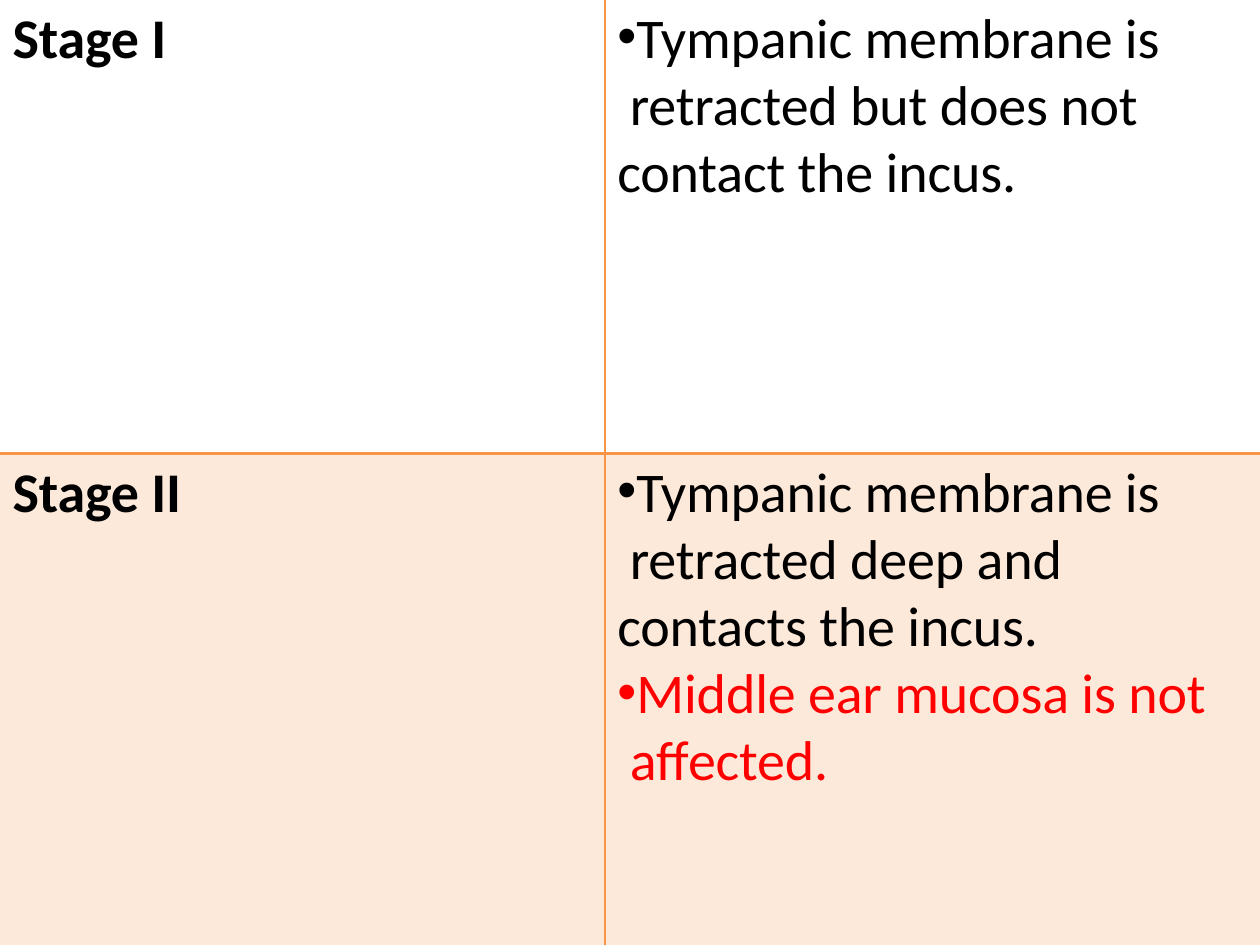
from lxml.etree import SubElement as Sub
from pptx import Presentation
from pptx.dml.color import RGBColor as RGB
from pptx.enum.shapes import MSO_CONNECTOR as Link, MSO_SHAPE as Kind
from pptx.oxml.ns import qn
from pptx.util import Inches, Pt

COLORS = {"text": "000000", "alert": "FF0000", "accent": "F79546"}
STAGES = [
    ("Stage I", [
        ("Tympanic membrane is\v retracted but does not\vcontact the incus.", "text"),
    ]),
    ("Stage II", [
        ("Tympanic membrane is\v retracted deep and\vcontacts the incus.", "text"),
        ("Middle ear mucosa is not\v affected.", "alert"),
    ]),
]
WIDTH, HEIGHT = 10, 7.5
SPLIT_X, SPLIT_Y = 4.8, 3.6
PAD_X, PAD_Y = 0.09, 0.01
LINE_H = 0.54
INSETS = {"margin_left": 0, "margin_right": 0,
          "margin_top": Inches(0.01), "margin_bottom": 0}
FONT = {"name": "Calibri", "size": Pt(32)}


def color(name):
    return RGB.from_string(COLORS[name])


def add_tint(slide, left, width):
    box = slide.shapes.add_shape(
        Kind.RECTANGLE, Inches(left), Inches(SPLIT_Y),
        Inches(width), Inches(HEIGHT - SPLIT_Y))
    box.shadow.inherit = False
    box.line.fill.background()
    box.fill.solid()
    box.fill.fore_color.rgb = color("accent")
    shade = box.fill._xPr.find(qn("a:solidFill"))[0]
    Sub(shade, qn("a:alpha")).set("val", "20000")


def add_rule(slide, ends, weight):
    rule = slide.shapes.add_connector(Link.STRAIGHT, *map(Inches, ends))
    rule.line.color.rgb = color("accent")
    rule.line.width = Pt(weight)
    Sub(rule._element.spPr, qn("a:effectLst"))


def add_bullet(par):
    props = par._p.get_or_add_pPr()
    Sub(props, qn("a:buSzPct")).set("val", "97000")
    Sub(props, qn("a:buFont")).set("typeface", "Arial")
    Sub(props, qn("a:buChar")).set("char", "•")


def add_text(slide, left, top, width, items, bold=False, bullets=False):
    """Place one text box; items pairs each paragraph with its colour."""
    lines = sum(text.count("\v") + 1 for text, _ in items)
    box = slide.shapes.add_textbox(*map(Inches, (left, top, width, lines * LINE_H)))
    frame = box.text_frame
    frame.word_wrap = True
    for key, val in INSETS.items():
        setattr(frame, key, val)
    for i, (text, tone) in enumerate(items):
        par = frame.add_paragraph() if i else frame.paragraphs[0]
        par.text = text
        par.space_before = Pt(0 if i else 1.1)
        props = par._p.get_or_add_pPr()
        props.set("marL", str(Inches(0.01)))
        props.set("indent", "0")
        if bullets:
            add_bullet(par)
        for run in par.runs:
            for key, val in (FONT | {"bold": bold}).items():
                setattr(run.font, key, val)
            run.font.color.rgb = color(tone)
            run.font._element.set("spc", "-10")


def main():
    prs = Presentation()
    prs.slide_width, prs.slide_height = Inches(WIDTH), Inches(HEIGHT)
    slide = prs.slides.add_slide(prs.slide_layouts[6])
    add_tint(slide, 0, SPLIT_X)
    add_tint(slide, SPLIT_X, WIDTH - SPLIT_X)
    add_rule(slide, (SPLIT_X, 0, SPLIT_X, HEIGHT), 1)
    add_rule(slide, (0, SPLIT_Y, WIDTH, SPLIT_Y), 2)
    for i, (stage, points) in enumerate(STAGES):
        top = i * SPLIT_Y + PAD_Y
        add_text(slide, PAD_X, top, 1.4, [(stage, "text")], bold=True)
        add_text(slide, SPLIT_X + PAD_X, top, 4.8, points, bullets=True)
    prs.save("out.pptx")


if __name__ == "__main__":
    main()
